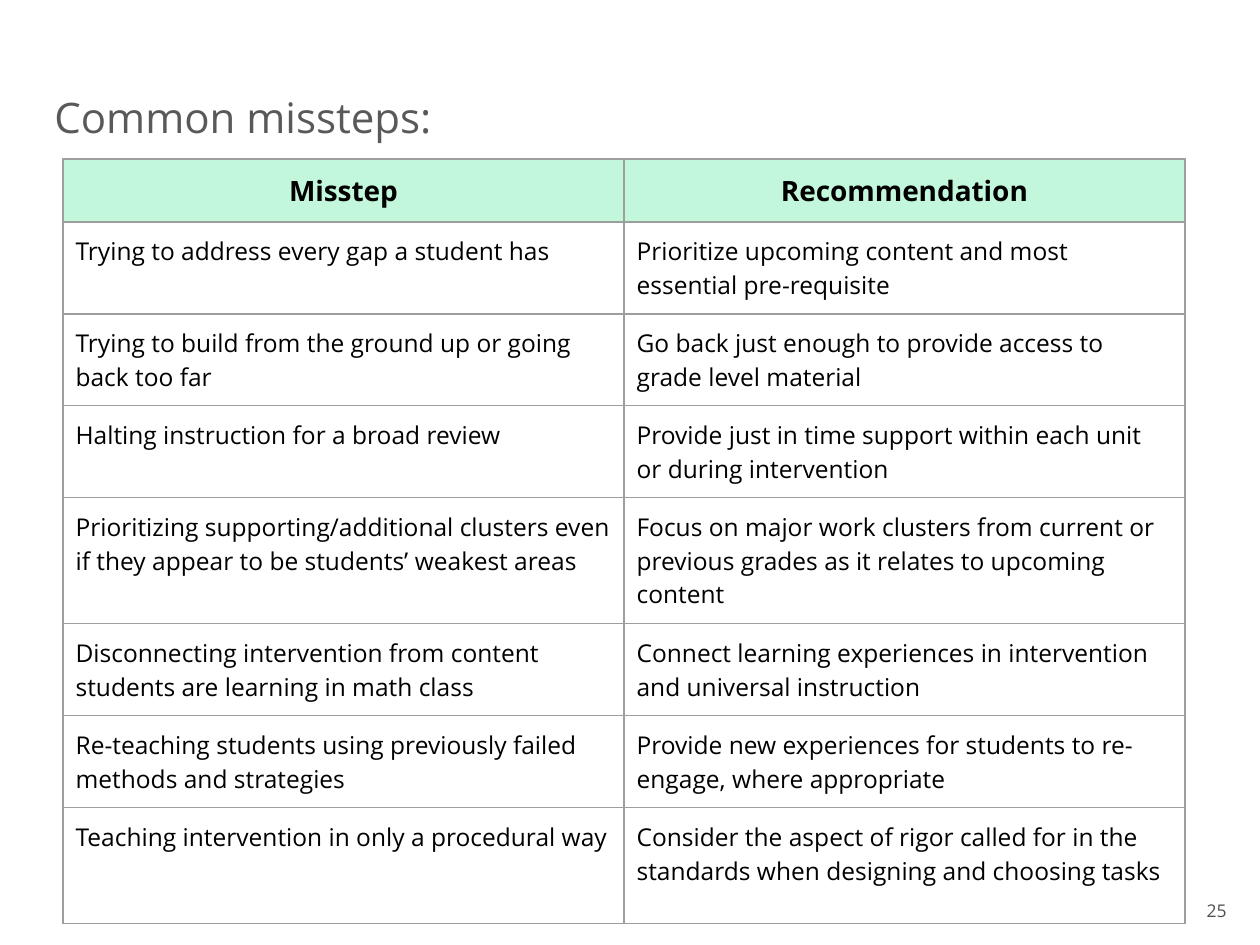
from dataclasses import dataclass

from lxml import etree
from pptx import Presentation
from pptx.dml.color import RGBColor
from pptx.enum.text import MSO_ANCHOR, PP_ALIGN
from pptx.oxml.ns import qn
from pptx.util import Emu, Pt

LEFT, CENTER, RIGHT = PP_ALIGN.LEFT, PP_ALIGN.CENTER, PP_ALIGN.RIGHT
TOP, MIDDLE = MSO_ANCHOR.TOP, MSO_ANCHOR.MIDDLE

PX = 914400 / 126
FONT = "Open Sans"
COLORS = {
    "title": "595959",
    "page": "50514F",
    "text": "000000",
    "header": "C3F7DC",
    "border": "9E9E9E",
}
BORDER_WIDTH = Pt(0.75)
CELL_MARGIN = 12.6
COLUMN_WIDTH = 561
HEADER_HEIGHT = 63
HEADERS = ("Misstep", "Recommendation")


@dataclass(frozen=True)
class Advice:
    misstep: str
    recommendation: str
    height: int = 92


@dataclass(frozen=True)
class Style:
    size: int
    color: str
    align: PP_ALIGN = LEFT
    bold: bool = False


@dataclass(frozen=True)
class Label:
    text: str
    box: tuple[int, int, int, int]
    margins: tuple[float, float]
    anchor: MSO_ANCHOR
    style: Style


ADVICE = (
    Advice("Trying to address every gap a student has",
           "Prioritize upcoming content and most essential pre-requisite"),
    Advice("Trying to build from the ground up or going back too far",
           "Go back just enough to provide access to grade level material"),
    Advice("Halting instruction for a broad review",
           "Provide just in time support within each unit or during intervention"),
    Advice("Prioritizing supporting/additional clusters even if they appear to be "
           "students’ weakest areas",
           "Focus on major work clusters from current or previous grades as it "
           "relates to upcoming content", 126),
    Advice("Disconnecting intervention from content students are learning in math class",
           "Connect learning experiences in intervention and universal instruction"),
    Advice("Re-teaching students using previously failed methods and strategies",
           "Provide new experiences for students to re-engage, where appropriate"),
    Advice("Teaching intervention in only a procedural way",
           "Consider the aspect of rigor called for in the standards when designing "
           "and choosing tasks", 116),
)
LABELS = (
    Label("25", (1039, 894, 200, 34), (12.6, 6.3), TOP, Style(10, "page", RIGHT)),
    Label("Common missteps:", (42, 38, 1182, 157), (12.6, 12.6), MIDDLE,
          Style(24, "title")),
)
HEADER_STYLE = Style(16, "text", CENTER, True)
BODY_STYLE = Style(14, "text")


def px(value: float) -> Emu:
    return Emu(round(value * PX))


def write_text(text_frame, text: str, style: Style) -> None:
    paragraph = text_frame.paragraphs[0]
    paragraph.alignment = style.align
    run = paragraph.add_run()
    run.text = text
    run.font.name = FONT
    run.font.size = Pt(style.size)
    run.font.bold = style.bold
    run.font.color.rgb = RGBColor.from_string(COLORS[style.color])


def set_margins(target, horizontal: float, vertical: float) -> None:
    target.margin_left = target.margin_right = px(horizontal)
    target.margin_top = target.margin_bottom = px(vertical)


def add_label(slide, label: Label) -> None:
    text_frame = slide.shapes.add_textbox(*map(px, label.box)).text_frame
    text_frame.word_wrap = True
    text_frame.vertical_anchor = label.anchor
    set_margins(text_frame, *label.margins)
    write_text(text_frame, label.text, label.style)


def add_borders(cell) -> None:
    properties = cell._tc.get_or_add_tcPr()
    for side in ("lnL", "lnR", "lnT", "lnB"):
        line = etree.SubElement(properties, qn(f"a:{side}"), w=str(BORDER_WIDTH))
        fill = etree.SubElement(line, qn("a:solidFill"))
        etree.SubElement(fill, qn("a:srgbClr"), val=COLORS["border"])


def fill_cell(cell, text: str, is_header: bool) -> None:
    """Borders go in before the fill, as the schema orders them."""
    add_borders(cell)
    if is_header:
        cell.fill.solid()
        cell.fill.fore_color.rgb = RGBColor.from_string(COLORS["header"])
    else:
        cell.fill.background()
    set_margins(cell, CELL_MARGIN, CELL_MARGIN)
    write_text(cell.text_frame, text, HEADER_STYLE if is_header else BODY_STYLE)


def add_advice_table(slide) -> None:
    rows = [Advice(*HEADERS, HEADER_HEIGHT), *ADVICE]
    height = sum(row.height for row in rows)
    table = slide.shapes.add_table(
        len(rows), len(HEADERS), px(63), px(159),
        px(COLUMN_WIDTH * len(HEADERS)), px(height),
    ).table
    table.horz_banding = False
    for column in table.columns:
        column.width = px(COLUMN_WIDTH)
    for index, row in enumerate(rows):
        table.rows[index].height = px(row.height)
        for column_index, text in enumerate((row.misstep, row.recommendation)):
            fill_cell(table.cell(index, column_index), text, index == 0)


def main() -> None:
    presentation = Presentation()
    presentation.slide_width, presentation.slide_height = px(1260), px(945)
    slide = presentation.slides.add_slide(presentation.slide_layouts[6])
    for label in LABELS:
        add_label(slide, label)
    add_advice_table(slide)
    presentation.save("out.pptx")


if __name__ == "__main__":
    main()
